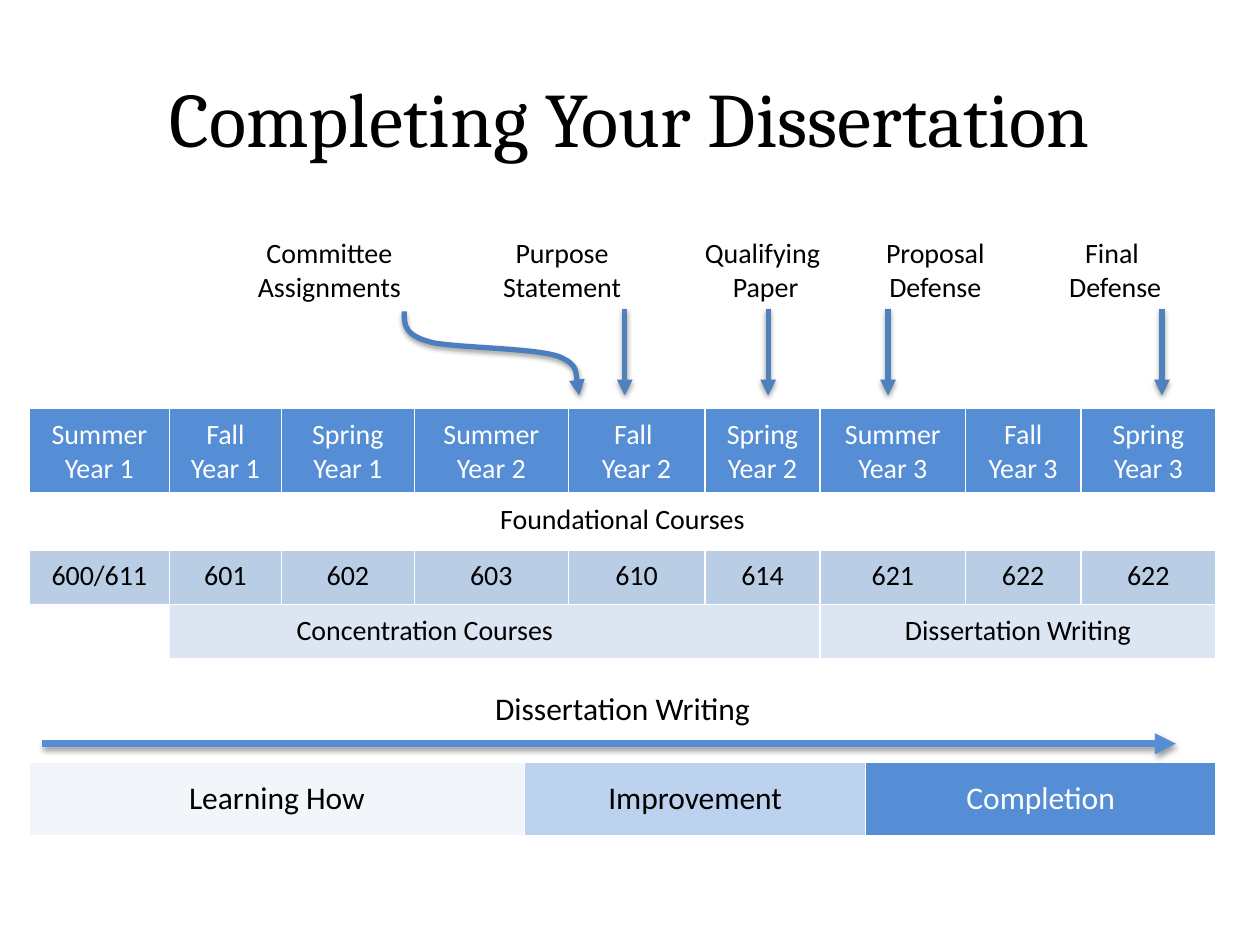
from dataclasses import dataclass
from typing import NamedTuple

from lxml.etree import SubElement as Sub
from pptx import Presentation
from pptx.dml.color import RGBColor as Rgb
from pptx.enum.shapes import MSO_CONNECTOR as Conn, MSO_SHAPE as Kind
from pptx.enum.text import MSO_ANCHOR as Anchor, PP_ALIGN as Align
from pptx.oxml.ns import qn
from pptx.util import Pt


@dataclass(frozen=True)
class Theme:
    head: str = "Cambria"
    body: str = "Calibri"
    big: int = 44
    mid: int = 18
    small: int = 16
    ink: str = "000000"
    white: str = "FFFFFF"
    blue: str = "558ED5"
    soft: str = "B9CDE5"
    pale: str = "DCE6F2"
    sky: str = "8EB4E3"
    steel: str = "4F81BD"
    curve: str = "4B7EBC"


T = Theme()


class Box(NamedTuple):
    text: str
    left: float
    width: float


class Cell(NamedTuple):
    text: str
    span: int
    fill: str
    ink: str = T.ink
    size: int = T.small
    alpha: int = 100
    top: float = 5
    anchor: Anchor = Anchor.TOP


class Arrow(NamedTuple):
    start: tuple[float, float]
    end: tuple[float, float]
    color: str = T.steel
    width: float = 3


COLS = [80, 64, 76, 63, 25, 78, 66, 26, 57, 66, 77]
ROWS = [49, 32, 31, 31, 59, 42]
SPANS = [1, 1, 1, 2, 1, 1, 2, 1, 1]
TERMS = ["Summer Year 1", "Fall Year 1", "Spring Year 1", "Summer Year 2",
         "Fall \vYear 2", "Spring Year 2", "Summer Year 3", "Fall Year 3",
         "Spring Year 3"]
CODES = ["600/611", "601", "602", "603", "610", "614", "621", "622", "622"]
MID = Anchor.MIDDLE
PLAN = [
    [Cell(t, s, T.blue, T.white) for t, s in zip(TERMS, SPANS)],
    [Cell("Foundational Courses", 11, T.white)],
    [Cell(t, s, T.soft) for t, s in zip(CODES, SPANS)],
    [Cell("Concentration Courses", 7, T.pale),
     Cell("Dissertation Writing", 4, T.pale)],
    [Cell("Dissertation Writing", 11, T.white, size=T.mid, alpha=38, top=18)],
    [Cell("Learning How", 4, T.pale, size=T.mid, alpha=35, anchor=MID),
     Cell("Improvement", 4, T.sky, size=T.mid, alpha=59, anchor=MID),
     Cell("Completion", 3, T.blue, T.white, T.mid, anchor=MID)],
]
LABELS = [Box("Proposal Defense", 487.5, 94), Box("Final \vDefense", 582.5, 109.5),
          Box("Purpose Statement", 253.5, 135.5),
          Box("Committee Assignments", 129.5, 117.5),
          Box("Qualifying \vPaper", 376, 123)]
DROPS = [357, 439, 507.5, 664]
BEND = [(231, 178), (231, 186), (231, 192), (248, 196), (266, 199),
        (307, 199), (320, 204), (331, 209), (331, 226), (331, 226)]


def write(frame, text: str, font: str, size: float, color: str) -> None:
    frame.text = text
    for para in frame.paragraphs:
        para.alignment = Align.CENTER
        para.font.name, para.font.size = font, Pt(size)
        para.font.color.rgb = Rgb.from_string(color)


def edge(props, side: str, width: float) -> None:
    line = Sub(props, qn(f"a:ln{side}"), w=str(Pt(width)))
    Sub(Sub(line, qn("a:solidFill")), qn("a:srgbClr"), val=T.white)


def paint(cell, look: Cell, row: int) -> None:
    props = cell._tc.get_or_add_tcPr()
    for side in "LRTB":
        thick = (row, side) in ((0, "B"), (1, "T"))
        edge(props, side, 3 if thick else 1)
    cell.fill.solid()
    cell.fill.fore_color.rgb = Rgb.from_string(look.fill)
    if look.alpha < 100:
        color = props.find(f"{qn('a:solidFill')}/{qn('a:srgbClr')}")
        Sub(color, qn("a:alpha"), val=str(look.alpha * 1000))


def grid(slide) -> None:
    shape = slide.shapes.add_table(len(ROWS), len(COLS), Pt(16.8), Pt(233.5),
                                   Pt(sum(COLS)), Pt(sum(ROWS)))
    table = shape.table
    table.first_row = table.horz_banding = False
    for col, width in zip(table.columns, COLS):
        col.width = Pt(width)
    for row, (high, looks) in enumerate(zip(ROWS, PLAN)):
        table.rows[row].height = Pt(high)
        col = 0
        for look in looks:
            cell, end = table.cell(row, col), col + look.span
            for spot in range(col, end):
                paint(table.cell(row, spot), look, row)
            if look.span > 1:
                cell.merge(table.cell(row, end - 1))
            cell.margin_left = cell.margin_right = Pt(10)
            cell.margin_top, cell.margin_bottom = Pt(look.top), Pt(5)
            cell.vertical_anchor = look.anchor
            write(cell.text_frame, look.text, T.body, look.size, look.ink)
            col = end


def panel(slide, left: float, top: float, width: float, height: float):
    shape = slide.shapes.add_shape(Kind.RECTANGLE, Pt(left), Pt(top),
                                   Pt(width), Pt(height))
    shape.shadow.inherit = False
    shape.fill.solid()
    shape.fill.fore_color.rgb = Rgb.from_string(T.white)
    shape.line.fill.background()
    return shape


def label(slide, box: Box) -> None:
    frame = panel(slide, box.left, 127.5, box.width, 53).text_frame
    frame.word_wrap, frame.vertical_anchor = True, Anchor.TOP
    frame.margin_left = frame.margin_right = Pt(7.2)
    frame.margin_top = frame.margin_bottom = Pt(7.2)
    write(frame, box.text, T.body, T.small, T.ink)


def stroke(shape, color: str, width: float) -> None:
    """Line, arrowhead and soft shadow below."""
    shape.line.color.rgb = Rgb.from_string(color)
    shape.line.width = Pt(width)
    Sub(shape.line._get_or_add_ln(), qn("a:tailEnd"), type="triangle")
    glow = Sub(Sub(shape._element.spPr, qn("a:effectLst")), qn("a:outerShdw"),
               blurRad=str(Pt(3.1)), dist=str(Pt(1.6)), dir="5400000",
               rotWithShape="0")
    Sub(Sub(glow, qn("a:srgbClr"), val=T.ink), qn("a:alpha"), val="38000")


def arrow(slide, item: Arrow) -> None:
    ends = [Pt(v) for v in (*item.start, *item.end)]
    line = slide.shapes.add_connector(Conn.STRAIGHT, *ends)
    stroke(line, item.color, item.width)


def curve(slide, points: list[tuple[float, float]]) -> None:
    first, *rest = [(Pt(x), Pt(y)) for x, y in points]
    pen = slide.shapes.build_freeform(*first)
    pen.add_line_segments(rest, close=False)
    shape = pen.convert_to_shape()
    shape.fill.background()
    # Each three straight steps become one Bézier step
    steps = list(shape._element.iter(qn("a:lnTo")))
    for start in range(0, len(steps), 3):
        host = steps[start].getparent()
        bend = Sub(host, qn("a:cubicBezTo"))
        for step in steps[start:start + 3]:
            bend.append(step[0])
            host.remove(step)
    stroke(shape, T.curve, 3)


def main() -> None:
    deck = Presentation()
    deck.slide_width, deck.slide_height = Pt(720), Pt(540)
    slide = deck.slides.add_slide(deck.slide_layouts[6])

    # Timeline table and its long arrow
    grid(slide)
    arrow(slide, Arrow((24, 425), (672, 425), T.blue, 4))

    # Title
    frame = slide.shapes.add_textbox(Pt(36), Pt(21.6), Pt(648), Pt(90)).text_frame
    frame.word_wrap, frame.vertical_anchor = True, MID
    write(frame, "Completing Your Dissertation", T.head, T.big, T.ink)

    # Milestones
    for box in LABELS:
        label(slide, box)
    for x in DROPS:
        arrow(slide, Arrow((x, 176.5), (x, 226)))

    # Blank start of the concentration row
    panel(slide, 10, 345, 87, 39.5)
    curve(slide, BEND)
    deck.save("out.pptx")


if __name__ == "__main__":
    main()
